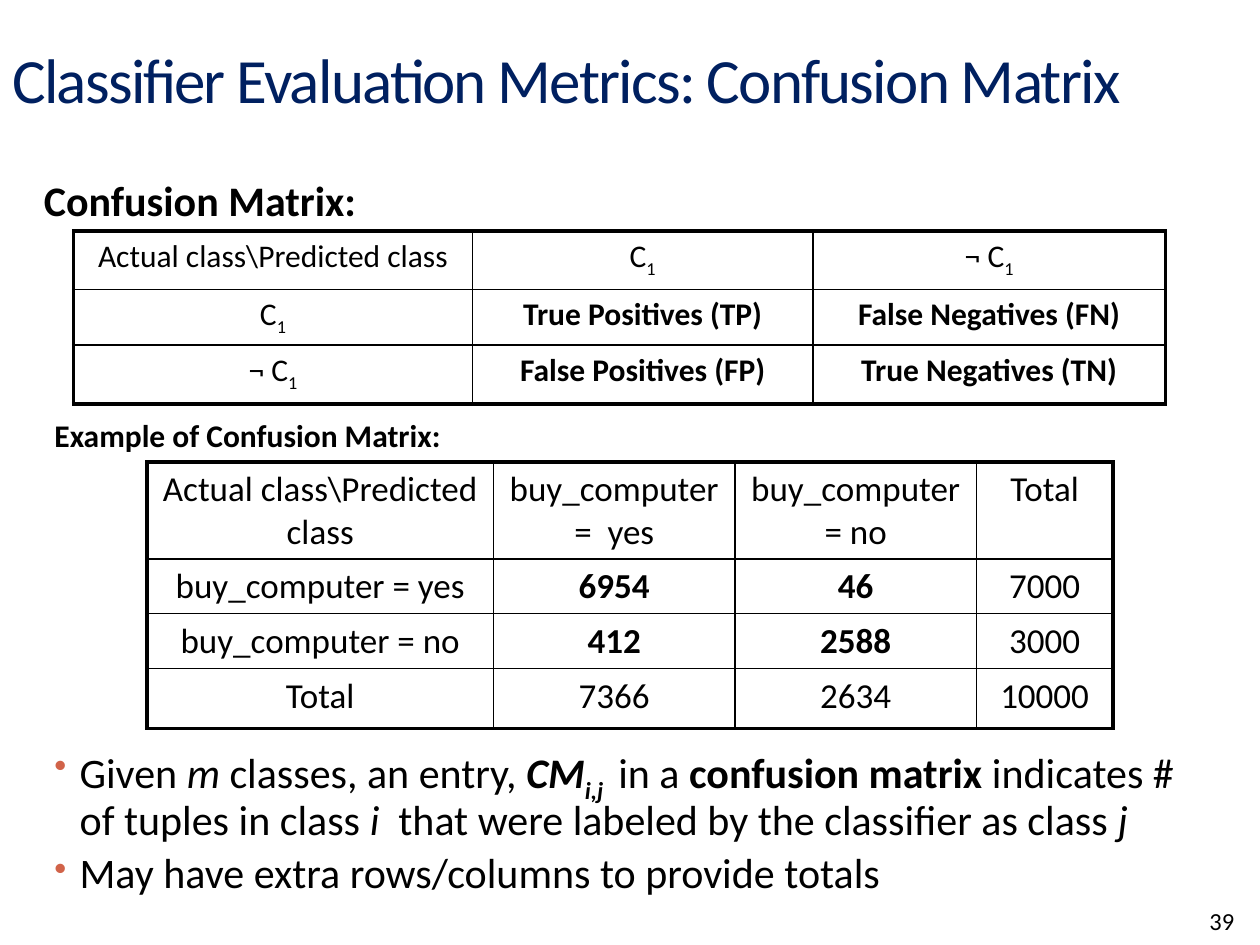
from dataclasses import dataclass

from lxml.etree import SubElement
from pptx import Presentation
from pptx.dml.color import RGBColor
from pptx.enum.text import MSO_ANCHOR, PP_ALIGN
from pptx.oxml.ns import qn
from pptx.util import Pt


@dataclass(frozen=True)
class Theme:
    """Font, colours, type sizes and line widths of the slide."""
    font: str = "Calibri"
    ink: str = "000000"
    title_ink: str = "002060"
    bullet_ink: str = "D16349"
    title: int = 36
    body: int = 24
    example: int = 20
    matrix: int = 18
    number: int = 14
    frame: float = 2.25
    rule: float = 1


THEME = Theme()
C1 = [("C", ""), ("1", "s")]
NOT_C1 = [("¬ C", ""), ("1", "s")]
MATRIX = [
    [[("Actual class\\Predicted class", "")], C1, NOT_C1],
    [C1, [("True Positives (TP)", "b")], [("False Negatives (FN)", "b")]],
    [NOT_C1, [("False Positives (FP)", "b")], [("True Negatives (TN)", "b")]],
]
EXAMPLE = [
    [[(label, "")] for label in ("Actual class\\Predicted class", "buy_computer =  yes",
                                 "buy_computer = no", "Total")],
    [[("buy_computer = yes", "")], [("6954", "b")], [("46", "b")], [("7000", "")]],
    [[("buy_computer = no", "")], [("412", "b")], [("2588", "b")], [("3000", "")]],
    [[(total, "")] for total in ("Total", "7366", "2634", "10000")],
]
NOTES = [
    [("Given", ""), (" m", "i"), (" classes, an entry, ", ""), ("CM", "bi"),
     ("i,j ", "bis"), (" in a ", ""), ("confusion matrix", "b"),
     (" indicates # of tuples in class ", ""), ("i", "i"),
     ("  that were labeled by the classifier as class ", ""), ("j", "i")],
    [("May have extra rows/columns to provide totals", "")],
]


def write(paragraph, pieces, size, color=THEME.ink):
    """Fill a paragraph with pieces styled b (bold), i (italic), s (subscript)."""
    paragraph.font.name = THEME.font
    paragraph.font.size = Pt(size)
    paragraph.font.color.rgb = RGBColor.from_string(color)
    for text, style in pieces:
        run = paragraph.add_run()
        run.text = text
        if "b" in style:
            run.font.bold = True
        if "i" in style:
            run.font.italic = True
        if "s" in style:
            run.font._element.set("baseline", "-25000")


def add_text(slide, box, pieces, size, color=THEME.ink, wrap=True):
    """Add a one-paragraph text box and return its frame."""
    frame = slide.shapes.add_textbox(*map(Pt, box)).text_frame
    frame.word_wrap = wrap
    write(frame.paragraphs[0], pieces, size, color)
    return frame


def add_title(slide, text):
    """Add the slightly tightened slide title."""
    frame = add_text(slide, (0, 0, 720, 90), [(text, "")], THEME.title, THEME.title_ink)
    frame.vertical_anchor = MSO_ANCHOR.MIDDLE
    frame.paragraphs[0].runs[0].font._element.set("spc", "-100")


def add_bullets(slide, box, items):
    """Add a bulleted list with hanging indents."""
    frame = slide.shapes.add_textbox(*map(Pt, box)).text_frame
    frame.word_wrap = True
    for index, pieces in enumerate(items):
        paragraph = frame.add_paragraph() if index else frame.paragraphs[0]
        paragraph.line_spacing = 0.9
        paragraph.space_before = Pt(THEME.body * 0.2)
        properties = paragraph._p.get_or_add_pPr()
        properties.set("marL", str(Pt(14.4)))
        properties.set("indent", str(-Pt(14.4)))
        SubElement(SubElement(properties, qn("a:buClr")), qn("a:srgbClr"), val=THEME.bullet_ink)
        SubElement(properties, qn("a:buSzPct"), val="85000")
        SubElement(properties, qn("a:buChar"), char="•")
        write(paragraph, pieces, THEME.body)


def set_borders(cell, outer_sides):
    """Draw heavy lines on outer sides and thin ones elsewhere."""
    properties = cell._tc.get_or_add_tcPr()
    for side in "LRTB":
        width = THEME.frame if side in outer_sides else THEME.rule
        line = SubElement(properties, qn(f"a:ln{side}"), w=str(Pt(width)))
        SubElement(SubElement(line, qn("a:solidFill")), qn("a:srgbClr"), val=THEME.ink)


def add_matrix(slide, left, top, widths, heights, rows, size):
    """Add a framed table of centred cells."""
    table = slide.shapes.add_table(
        len(heights), len(widths), Pt(left), Pt(top), Pt(sum(widths)), Pt(sum(heights))).table
    table.first_row = table.horz_banding = False
    for column, width in zip(table.columns, widths):
        column.width = Pt(width)
    for row, height in zip(table.rows, heights):
        row.height = Pt(height)
    last_row, last_column = len(heights) - 1, len(widths) - 1
    for r, entries in enumerate(rows):
        for c, pieces in enumerate(entries):
            cell = table.cell(r, c)
            edges = {"L": c == 0, "R": c == last_column, "T": r == 0, "B": r == last_row}
            set_borders(cell, [side for side, is_outer in edges.items() if is_outer])
            cell.fill.background()
            paragraph = cell.text_frame.paragraphs[0]
            paragraph.alignment = PP_ALIGN.CENTER
            write(paragraph, pieces, size)


def main():
    """Build and save the confusion matrix slide."""
    deck = Presentation()
    deck.slide_width, deck.slide_height = Pt(720), Pt(540)
    slide = deck.slides.add_slide(deck.slide_layouts[6])
    add_title(slide, "Classifier Evaluation Metrics: Confusion Matrix")
    add_matrix(slide, 84, 264, (198, 138, 138, 78), (55.5, 31, 31, 34.5),
               EXAMPLE, THEME.example)
    add_bullets(slide, (24, 423.5, 666, 99), NOTES)
    add_text(slide, (18, 96, 205, 36), [("Confusion Matrix:", "b")], THEME.body)
    add_matrix(slide, 42, 132, (228, 194.5, 201.5), (33.5, 30.5, 33.5),
               MATRIX, THEME.matrix)
    add_text(slide, (24, 234, 281, 29), [("Example of Confusion Matrix:", "b")],
             THEME.matrix, wrap=False)
    add_text(slide, (684, 514, 36, 26), [("39", "")], THEME.number)
    deck.save("out.pptx")


if __name__ == "__main__":
    main()
